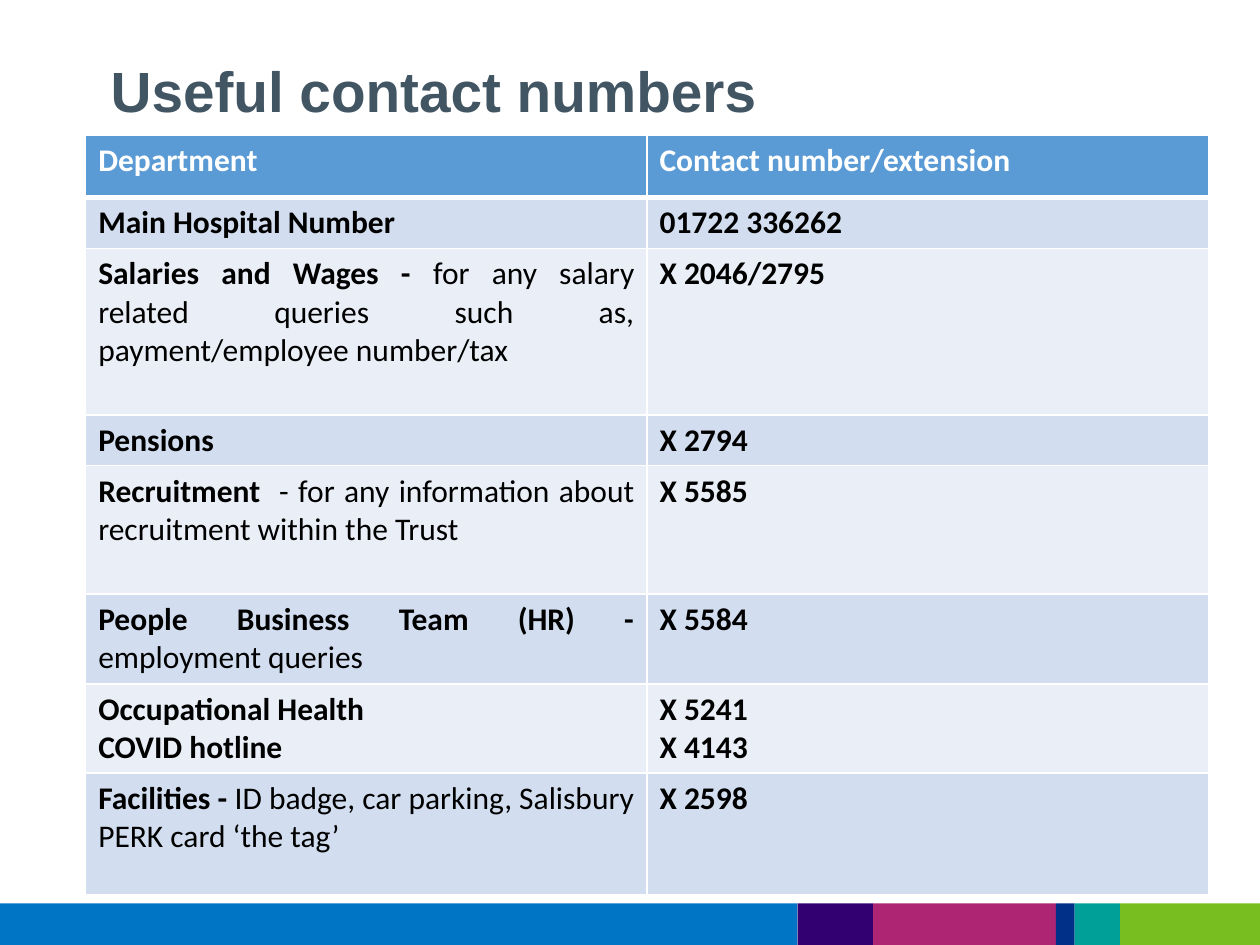
from dataclasses import dataclass

from lxml import etree
from pptx import Presentation
from pptx import util as u
from pptx.dml.color import RGBColor
from pptx.enum import shapes, text
from pptx.oxml import ns

WIDTH, HEIGHT = u.Inches(10), u.Inches(7.5)
COLORS = {
    "blue": "0074C5", "purple": "330072", "magenta": "AE2573",
    "navy": "003087", "teal": "009F98", "green": "78BE20",
    "title": "425563", "header": "5B9BD5", "odd": "D2DEEF",
    "even": "EAEFF7", "white": "FFFFFF", "black": "000000",
}
JUSTIFY = text.PP_ALIGN.JUSTIFY
LEFT = text.PP_ALIGN.LEFT


@dataclass(frozen=True)
class Stripe:
    start: float
    end: float
    color: str


@dataclass(frozen=True)
class Contact:
    height: float
    names: tuple[str, ...]
    numbers: tuple[str, ...]
    detail: str = ""


STRIPES = (
    Stripe(0, 0.633, "blue"),
    Stripe(0.633, 0.693, "purple"),
    Stripe(0.693, 0.838, "magenta"),
    Stripe(0.838, 0.853, "navy"),
    Stripe(0.853, 0.889, "teal"),
    Stripe(0.889, 1, "green"),
)
CONTACTS = (
    Contact(0.066, ("Department",), ("Contact number/extension",)),
    Contact(0.054, ("Main Hospital Number",), ("01722 336262",)),
    Contact(0.176, ("Salaries and Wages - ",), ("X 2046/2795",),
            "for any salary related queries such as, payment/employee number/tax"),
    Contact(0.054, ("Pensions",), ("X 2794",)),
    Contact(0.136, ("Recruitment  ",), ("X 5585",),
            "- for any information about recruitment within the Trust"),
    Contact(0.095, ("People Business Team (HR) - ",), ("X 5584",),
            "employment queries"),
    Contact(0.094, ("Occupational Health", "COVID hotline"), ("X 5241", "X 4143")),
    Contact(0.129, ("Facilities - ",), ("X 2598",),
            "ID badge, car parking, Salisbury PERK card ‘the tag’"),
)


def across(share: float) -> int:
    return round(WIDTH * share)


def down(share: float) -> int:
    return round(HEIGHT * share)


def rgb(name: str) -> RGBColor:
    return RGBColor.from_string(COLORS[name])


def add_span(para, words: str, *, size: float = 18, font: str = "Calibri",
             color: str = "black", bold: bool = True) -> None:
    span = para.add_run()
    span.text = words
    span.font.size = u.Pt(size)
    span.font.name = font
    span.font.bold = bold
    span.font.color.rgb = rgb(color)


def add_stripe(page, stripe: Stripe) -> None:
    top = down(0.956)
    box = page.shapes.add_shape(
        shapes.MSO_SHAPE.RECTANGLE, across(stripe.start), top,
        across(stripe.end - stripe.start), HEIGHT - top)
    box.shadow.inherit = False
    box.fill.solid()
    box.fill.fore_color.rgb = rgb(stripe.color)
    box.line.fill.background()


def add_title(page, words: str) -> None:
    box = page.shapes.add_textbox(across(0.078), down(0.058), across(0.853), down(0.083))
    frame = box.text_frame
    frame.word_wrap = True
    frame.vertical_anchor = text.MSO_ANCHOR.MIDDLE
    para = frame.paragraphs[0]
    para.line_spacing = 0.9
    add_span(para, words, size=32.4, font="Arial", color="title")


def set_borders(cell, **widths: float) -> None:
    properties = cell._tc.get_or_add_tcPr()
    for index, (side, points) in enumerate(widths.items()):
        line = etree.Element(ns.qn(f"a:ln{side}"), w=str(u.Pt(points)))
        fill = etree.SubElement(line, ns.qn("a:solidFill"))
        etree.SubElement(fill, ns.qn("a:srgbClr"), val=COLORS["white"])
        properties.insert(index, line)


def fill_cell(cell, lines: tuple[str, ...], *, fill: str, color: str,
              align, detail: str = "") -> None:
    cell.fill.solid()
    cell.fill.fore_color.rgb = rgb(fill)
    frame = cell.text_frame
    for index, line in enumerate(lines):
        para = frame.add_paragraph() if index else frame.paragraphs[0]
        para.alignment = align
        add_span(para, line, color=color)
    if detail:
        add_span(para, detail, color=color, bold=False)


def add_contacts(page, contacts: tuple[Contact, ...]) -> None:
    height = sum(contact.height for contact in contacts)
    table = page.shapes.add_table(
        len(contacts), 2, across(0.068), down(0.143),
        across(0.891), down(height)).table
    for index, contact in enumerate(contacts):
        table.rows[index].height = down(contact.height)
        header = index == 0
        fill = "header" if header else ("odd" if index % 2 else "even")
        color = "white" if header else "black"
        name, number = table.rows[index].cells
        fill_cell(name, contact.names, fill=fill, color=color,
                  align=LEFT if header else JUSTIFY, detail=contact.detail)
        fill_cell(number, contact.numbers, fill=fill, color=color, align=LEFT)
        for cell in (name, number):
            set_borders(cell, L=1, R=1, T=3 if index == 1 else 1, B=3 if header else 1)


def main() -> None:
    deck = Presentation()
    deck.slide_width, deck.slide_height = WIDTH, HEIGHT
    page = deck.slides.add_slide(deck.slide_layouts[6])
    for stripe in STRIPES:
        add_stripe(page, stripe)
    add_title(page, "Useful contact numbers")
    add_contacts(page, CONTACTS)
    deck.save("out.pptx")


if __name__ == "__main__":
    main()
